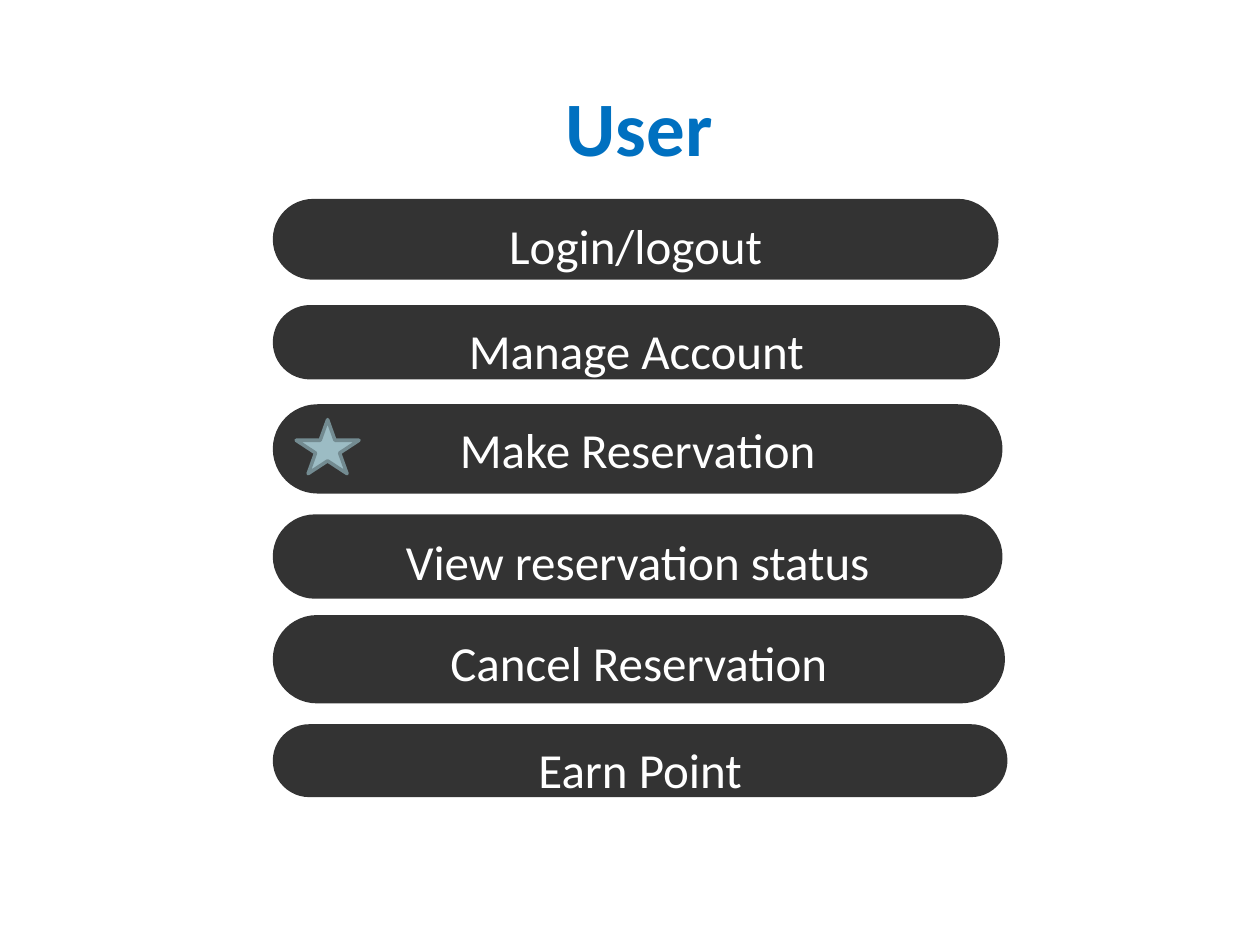
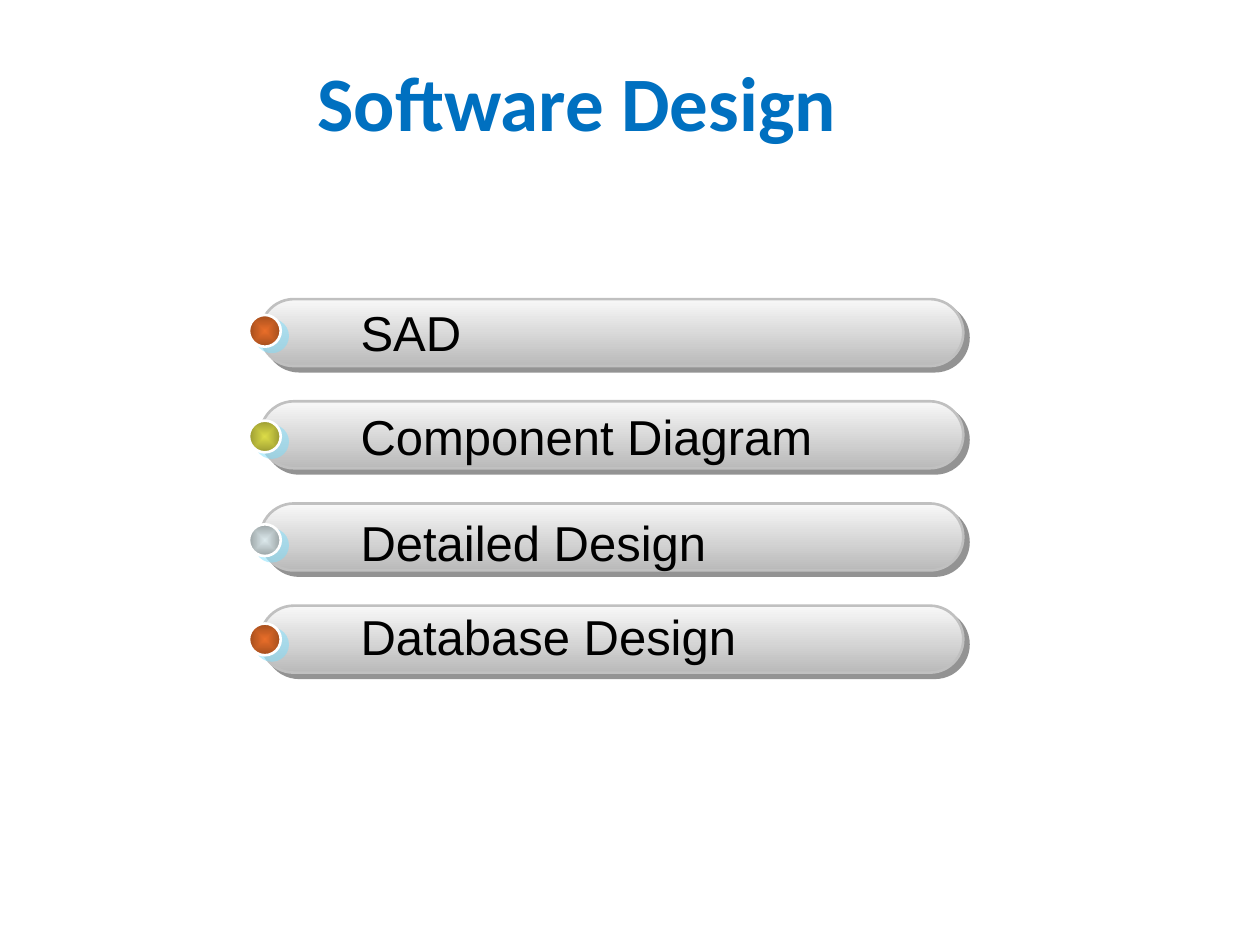
from dataclasses import dataclass

import pptx
import pptx.dml.color
import pptx.enum.shapes
import pptx.enum.text
import pptx.oxml
import pptx.oxml.ns
import pptx.util

Cm = pptx.util.Cm
Pt = pptx.util.Pt
Shape = pptx.enum.shapes.MSO_SHAPE
Align = pptx.enum.text.PP_ALIGN
Anchor = pptx.enum.text.MSO_ANCHOR


@dataclass(frozen=True)
class Theme:
    title: str = "0070C0"
    function_bar: str = "333333"
    function_text: str = "FFFFFF"
    star: str = "9CBCC4"
    star_edge: str = "738B91"
    topic_bar: tuple = ("F8F8F8", "BABABA")
    topic_edge: str = "C0C0C0"
    topic_text: str = "000000"
    topic_shadow: str = "292929"
    dot_edge: str = "FFFFFF"
    dot_shadow: str = "7BDEFD"
    orange: tuple = ("E96E29", "A34D1D")
    olive: tuple = ("DCDC48", "9A9A32")
    silver: tuple = ("DCE9EC", "9AA3A5")
    title_font: str = "Calibri"
    topic_font: str = "Arial"
    title_size: int = 44
    item_size: int = 28


THEME = Theme()

# Each function: label, top, width, height, text anchor
USER_FUNCTIONS = [
    ("Login/logout", 4.01, 14.63, 1.63, Anchor.TOP),
    ("Manage Account", 6.15, 14.66, 1.5, Anchor.TOP),
    ("Make Reservation", 8.15, 14.71, 1.8, Anchor.MIDDLE),
    ("View reservation status", 10.37, 14.71, 1.7, Anchor.TOP),
    ("Cancel Reservation", 12.4, 14.76, 1.78, Anchor.TOP),
    ("Earn Point", 14.6, 14.81, 1.47, Anchor.TOP),
]

# Each topic: label, label top, label width, dot top, dot colours
DESIGN_TOPICS = [
    ("SAD", 5.97, 2.57, 6.35, THEME.orange),
    ("Component Diagram", 8.06, 9.73, 8.48, THEME.olive),
    ("Detailed Design", 10.21, 7.57, 10.57, THEME.silver),
    ("Database Design", 12.09, 8.18, 12.57, THEME.orange),
]


def rgb(color):
    return pptx.dml.color.RGBColor.from_string(color)


def write(shape, text, *, font, size, color, bold=False, align=Align.CENTER,
          anchor=Anchor.TOP, wrap=True, insets=(0.25, 0.13, 0.25, 0.13)):
    frame = shape.text_frame
    frame.word_wrap = wrap
    frame.vertical_anchor = anchor
    (frame.margin_left, frame.margin_top,
     frame.margin_right, frame.margin_bottom) = map(Cm, insets)
    paragraph = frame.paragraphs[0]
    paragraph.alignment = align
    run = paragraph.add_run()
    run.text = text
    run.font.name = font
    run.font.size = Pt(size)
    run.font.bold = bold
    run.font.color.rgb = rgb(color)


def add_text(slide, box, text, **text_format):
    write(slide.shapes.add_textbox(*map(Cm, box)), text, **text_format)


def add_title(slide, box, text):
    add_text(slide, box, text, font=THEME.title_font, size=THEME.title_size,
             color=THEME.title, bold=True, anchor=Anchor.MIDDLE)


def add_preset(slide, preset, box, fill=None, edge=None, edge_width=1.5):
    shape = slide.shapes.add_shape(preset, *map(Cm, box))
    shape.shadow.inherit = False
    if preset == Shape.ROUNDED_RECTANGLE:
        shape.adjustments[0] = 0.5
    if fill:
        shape.fill.solid()
        shape.fill.fore_color.rgb = rgb(fill)
    if edge:
        shape.line.color.rgb = rgb(edge)
        shape.line.width = Pt(edge_width)
    else:
        shape.line.fill.background()
    return shape


def set_gradient(shape, colors, centred=False):
    shape.fill.gradient()
    shape.fill.gradient_angle = 270
    for stop, color in zip(shape.fill.gradient_stops, colors):
        stop.color.rgb = rgb(color)
    if centred:
        linear = shape.element.spPr.find(".//" + pptx.oxml.ns.qn("a:lin"))
        linear.getparent().replace(linear, pptx.oxml.parse_xml(
            f'<a:path {pptx.oxml.ns.nsdecls("a")} path="shape">'
            '<a:fillToRect l="50000" t="50000" r="50000" b="50000"/></a:path>'))


def set_shadow(shape, color, distance, angle):
    effects = shape.element.spPr.find(pptx.oxml.ns.qn("a:effectLst"))
    effects.append(pptx.oxml.parse_xml(
        f'<a:outerShdw {pptx.oxml.ns.nsdecls("a")} dist="{Pt(distance)}" '
        f'dir="{angle * 60000}" algn="ctr" rotWithShape="0">'
        f'<a:srgbClr val="{color}"><a:alpha val="50000"/></a:srgbClr>'
        '</a:outerShdw>'))


def add_function_bar(slide, label, top, width, height, anchor):
    bar = add_preset(slide, Shape.ROUNDED_RECTANGLE, (5.5, top, width, height),
                     fill=THEME.function_bar)
    write(bar, label, font=THEME.title_font, size=THEME.item_size,
          color=THEME.function_text, anchor=anchor,
          insets=(0.18, 0.1, 0.18, 0.1))


def add_topic_bar(slide, top):
    bar = add_preset(slide, Shape.ROUNDED_RECTANGLE, (5.25, top, 14.17, 1.35),
                     edge=THEME.topic_edge)
    set_gradient(bar, THEME.topic_bar)
    set_shadow(bar, THEME.topic_shadow, 4.2, 45)


def add_dot(slide, top, colors):
    dot = add_preset(slide, Shape.OVAL, (5.02, top, 0.64, 0.64),
                     edge=THEME.dot_edge)
    set_gradient(dot, colors, centred=True)
    set_shadow(dot, THEME.dot_shadow, 5, 37)


def build_user(slide):
    add_title(slide, (5.18, 1.9, 15.42, 1.27), "User")
    for function in USER_FUNCTIONS:
        add_function_bar(slide, *function)
    # Star marks the key function
    add_preset(slide, Shape.STAR_5_POINT, (5.97, 8.46, 1.27, 1.09),
               fill=THEME.star, edge=THEME.star_edge, edge_width=2)


def build_software_design(slide):
    add_title(slide, (3.47, 1.23, 16.33, 1.6), "Software Design")
    for row, (label, label_top, width, dot_top, colors) in enumerate(DESIGN_TOPICS):
        add_topic_bar(slide, 6.03 + 2.06 * row)
        add_text(slide, (7.02, label_top, width, 1.45), label,
                 font=THEME.topic_font, size=THEME.item_size,
                 color=THEME.topic_text, align=Align.LEFT, wrap=False)
        add_dot(slide, dot_top, colors)


def main():
    deck = pptx.Presentation()
    deck.slide_width, deck.slide_height = Cm(25.4), Cm(19.05)
    blank = deck.slide_layouts[6]
    for build in (build_user, build_software_design):
        build(deck.slides.add_slide(blank))
    deck.save("out.pptx")


if __name__ == "__main__":
    main()
